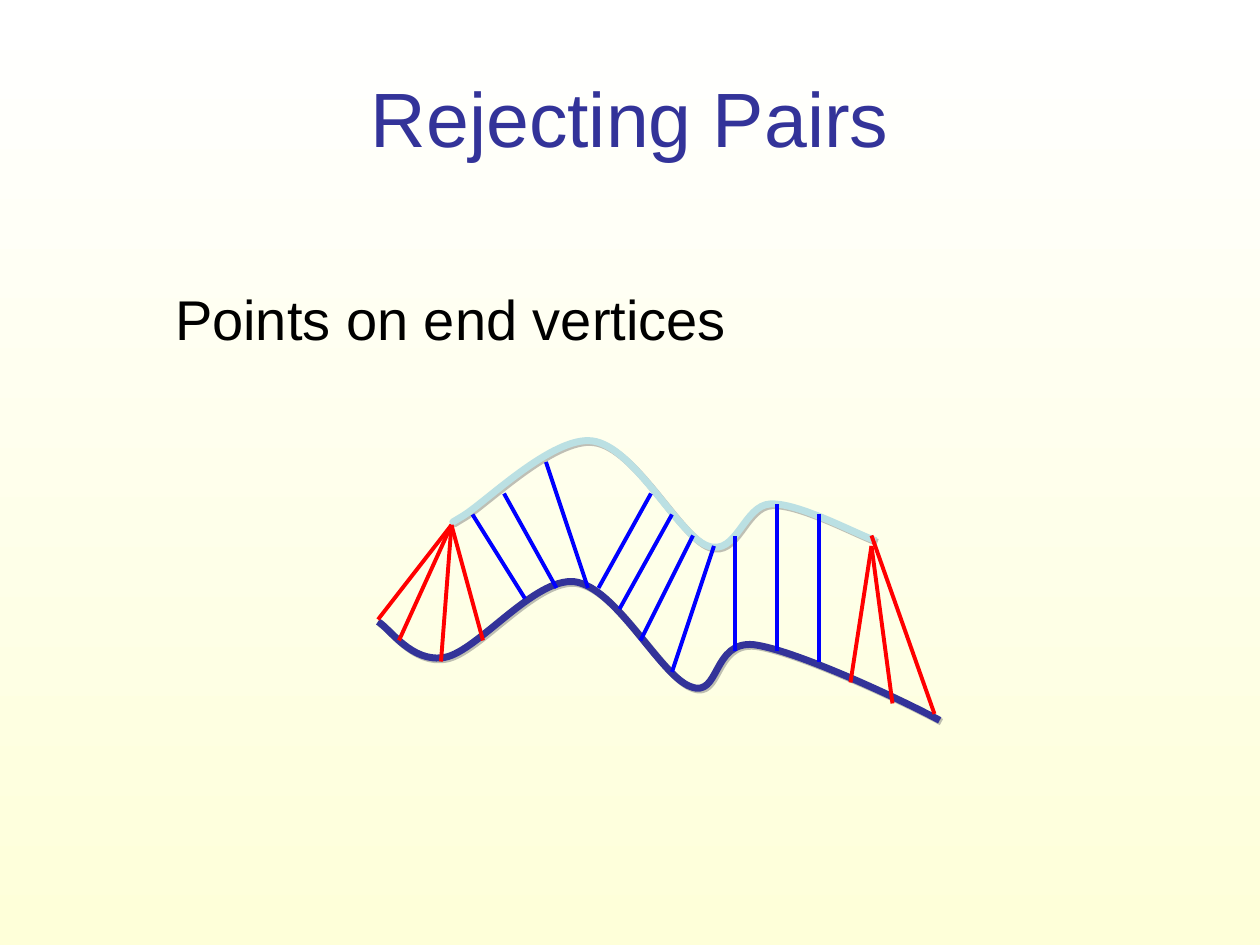
from lxml import etree
from pptx import Presentation
from pptx.dml.color import RGBColor
from pptx.enum.shapes import MSO_CONNECTOR
from pptx.enum.text import MSO_ANCHOR, PP_ALIGN
from pptx.oxml import parse_xml
from pptx.oxml.ns import nsdecls, qn
from pptx.util import Pt

PX = 7620  # EMU per px, 120 px to the inch
STRAIGHT = MSO_CONNECTOR.STRAIGHT
CENTER, LEFT = PP_ALIGN.CENTER, PP_ALIGN.LEFT
MIDDLE, TOP = MSO_ANCHOR.MIDDLE, MSO_ANCHOR.TOP

NAVY, PALE, RED, BLUE = "333399", "BBE0E3", "FF0000", "0000FF"

# Each curve is a start point followed by triples of Bezier points.
LOWER_CURVE = [
    (0, 192),
    (11, 198), (32, 232), (64, 226),
    (95, 220), (149, 150), (187, 154),
    (227, 159), (269, 244), (298, 254),
    (326, 265), (318, 210), (358, 214),
    (397, 219), (498, 266), (535, 286),
]
UPPER_CURVE = [
    (80, 92),
    (80, 92), (60, 104), (80, 92),
    (101, 80), (166, 15), (204, 20),
    (244, 25), (286, 110), (314, 120),
    (342, 130), (348, 81), (374, 80),
    (401, 79), (454, 108), (474, 115),
]
# Pairs run from the lower curve to the upper one.
LEFT_END = (70, 100)
REJECTED_PAIRS = [
    *((p, LEFT_END) for p in [(0, 190), (20, 210), (60, 230), (100, 210)]),
    ((450, 250), (470, 120)),
    ((490, 270), (470, 120)),
    ((530, 280), (470, 110)),
]
KEPT_PAIRS = [
    ((140, 170), (90, 90)),
    ((170, 160), (120, 70)),
    ((200, 160), (160, 40)),
    ((210, 160), (260, 70)),
    ((230, 180), (280, 90)),
    ((250, 210), (300, 110)),
    ((280, 240), (320, 120)),
    ((340, 220), (340, 110)),
    ((380, 220), (380, 80)),
    ((420, 230), (420, 90)),
]


def rgb(value):
    return RGBColor.from_string(value)


def set_background(slide, top, bottom):
    fill = slide.background.fill
    fill.gradient()
    fill.gradient_angle = 270
    for stop, color in zip(fill.gradient_stops, (top, bottom)):
        stop.color.rgb = rgb(color)


def add_text(slide, box, text, size, color, align, anchor):
    tb = slide.shapes.add_textbox(*(v * PX for v in box))
    tf = tb.text_frame
    tf.word_wrap = True
    tf.vertical_anchor = anchor
    p = tf.paragraphs[0]
    p.text = text
    p.alignment = align
    font = p.runs[0].font
    font.name, font.size, font.color.rgb = "Arial", Pt(size), rgb(color)
    return p


def add_hanging_indent(p, px):
    pPr = p._p.get_or_add_pPr()
    pPr.set("marL", str(px * PX))
    pPr.set("indent", str(-px * PX))


def add_shadow(sp):
    """Give the shape a soft grey shadow to the lower right."""
    sp.shadow.inherit = False
    effects = sp._element.spPr.find(qn("a:effectLst"))
    effects.append(parse_xml(
        f'<a:outerShdw {nsdecls("a")} dist="17961" dir="2700000">'
        '<a:srgbClr val="808080"><a:alpha val="50000"/></a:srgbClr>'
        '</a:outerShdw>'))


def add_curve(slide, left, top, points, color):
    """Draw a freeform, then join each three line points into one Bezier."""
    builder = slide.shapes.build_freeform(*points[0], scale=PX)
    builder.add_line_segments(points[1:], close=False)
    sp = builder.convert_to_shape(left * PX, top * PX)
    lines = list(sp._element.iter(qn("a:lnTo")))
    for i in range(0, len(lines), 3):
        bezier = etree.Element(qn("a:cubicBezTo"))
        lines[i].addprevious(bezier)
        for line in lines[i:i + 3]:
            bezier.append(line[0])
            line.getparent().remove(line)
    sp.fill.background()
    sp.line.color.rgb = rgb(color)
    sp.line.width = Pt(4)
    add_shadow(sp)


def add_pair(slide, left, top, pair, color):
    (x1, y1), (x2, y2) = pair
    line = slide.shapes.add_connector(
        STRAIGHT, (left + x1) * PX, (top + y1) * PX,
        (left + x2) * PX, (top + y2) * PX)
    line.line.color.rgb = rgb(color)
    line.line.width = Pt(2.25)
    etree.SubElement(line._element.spPr, qn("a:effectLst"))


def add_matching(slide, left, top):
    """Two curves with the kept and rejected point pairs between them."""
    add_curve(slide, left, top, LOWER_CURVE, NAVY)
    add_curve(slide, left, top, UPPER_CURVE, PALE)
    for pairs, color in ((REJECTED_PAIRS, RED), (KEPT_PAIRS, BLUE)):
        for pair in pairs:
            add_pair(slide, left, top, pair, color)


def main():
    prs = Presentation()
    prs.slide_width, prs.slide_height = 1200 * PX, 900 * PX
    slide = prs.slides.add_slide(prs.slide_layouts[6])
    set_background(slide, "FFFFFF", "FEFFD9")
    add_text(slide, (60, 36, 1080, 150), "Rejecting Pairs", 44, NAVY,
             CENTER, MIDDLE)
    body = add_text(slide, (155, 265, 1025, 586), "Points on end vertices",
                    32, "000000", LEFT, TOP)
    add_hanging_indent(body, 45)
    add_matching(slide, 360, 400)
    prs.save("out.pptx")


if __name__ == "__main__":
    main()
